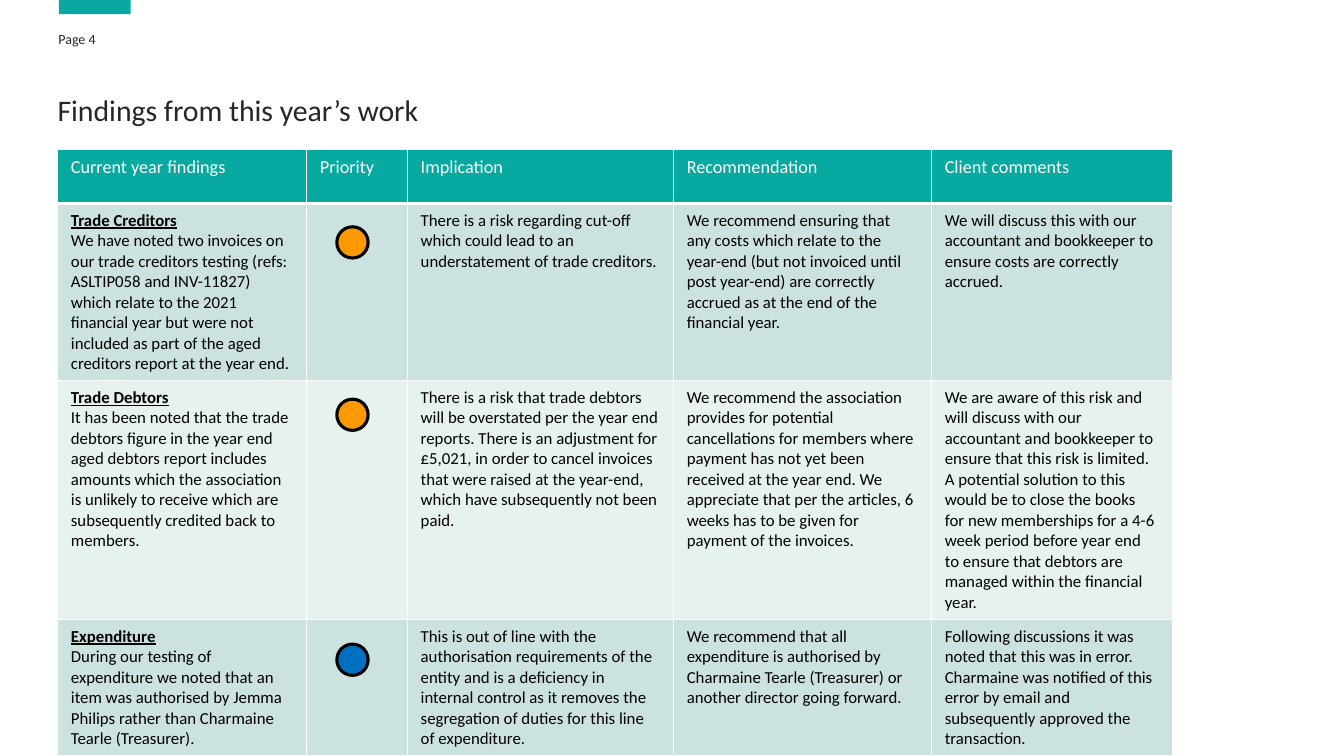
from dataclasses import dataclass

from lxml.etree import SubElement
from pptx import Presentation
from pptx.dml.color import RGBColor
from pptx.enum.shapes import MSO_SHAPE as Preset
from pptx.enum.text import MSO_ANCHOR as Anchor, MSO_AUTO_SIZE as AutoSize, PP_ALIGN as Align
from pptx.oxml.ns import qn
from pptx.shapes.base import BaseShape
from pptx.slide import Slide
from pptx.table import Table, _Cell as Cell
from pptx.text.text import TextFrame, _Paragraph as Paragraph
from pptx.util import Emu, Inches, Length, Pt

SLIDE_WIDTH = Inches(13.33)
SLIDE_HEIGHT = Inches(7.5)
FONT = "Calibri"

TEAL = RGBColor(0x07, 0xA9, 0xA1)
PALE_TEAL = RGBColor(0xCC, 0xE2, 0xE0)
PALEST_TEAL = RGBColor(0xE7, 0xF1, 0xF0)
CHARCOAL = RGBColor(0x26, 0x26, 0x26)
BLACK = RGBColor(0x00, 0x00, 0x00)
WHITE = RGBColor(0xFF, 0xFF, 0xFF)
AMBER = RGBColor(0xFF, 0x99, 0x00)
BLUE = RGBColor(0x00, 0x70, 0xC0)

HEADINGS = ("Current year findings", "Priority", "Implication", "Recommendation", "Client comments")
COLUMN_SHARES = (18.53, 7.5, 19.8, 19.2, 17.93)
HEADER_SHARE = 7.2


@dataclass(frozen=True)
class Area:
    left: float
    top: float
    width: float
    height: float

    def lengths(self) -> tuple[Length, Length, Length, Length]:
        return across(self.left), down(self.top), across(self.width), down(self.height)


@dataclass(frozen=True)
class Finding:
    topic: str
    detail: str
    implication: str
    recommendation: str
    comment: str
    priority: RGBColor
    marker_top: float
    row_share: float


FINDINGS = (
    Finding(
        "Trade Creditors",
        "We have noted two invoices on our trade creditors testing (refs: ASLTIP058 and INV-11827) "
        "which relate to the 2021 financial year but were not included as part of the aged "
        "creditors report at the year end.",
        "There is a risk regarding cut-off which could lead to an understatement of trade creditors.",
        "We recommend ensuring that any costs which relate to the year-end (but not invoiced until "
        "post year-end) are correctly accrued as at the end of the financial year.",
        "We will discuss this with our accountant and bookkeeper to ensure costs are correctly accrued.",
        AMBER, 30, 23.07,
    ),
    Finding(
        "Trade Debtors",
        "It has been noted that the trade debtors figure in the year end aged debtors report includes "
        "amounts which the association is unlikely to receive which are subsequently credited back "
        "to members.",
        "There is a risk that trade debtors will be overstated per the year end reports. There is an "
        "adjustment for £5,021, in order to cancel invoices that were raised at the year-end, which "
        "have subsequently not been paid.",
        "We recommend the association provides for potential cancellations for members where payment "
        "has not yet been received at the year end. We appreciate that per the articles, 6 weeks has "
        "to be given for payment of the invoices.",
        "We are aware of this risk and will discuss with our accountant and bookkeeper to ensure that "
        "this risk is limited. A potential solution to this would be to close the books for new "
        "memberships for a 4-6 week period before year end to ensure that debtors are managed within "
        "the financial year.",
        AMBER, 52.8, 25.73,
    ),
    Finding(
        "Expenditure",
        "During our testing of expenditure we noted that an item was authorised by Jemma Philips "
        "rather than Charmaine Tearle (Treasurer).",
        "This is out of line with the authorisation requirements of the entity and is a deficiency in "
        "internal control as it removes the segregation of duties for this line of expenditure.",
        "We recommend that all expenditure is authorised by Charmaine Tearle (Treasurer) or another "
        "director going forward.",
        "Following discussions it was noted that this was in error. Charmaine was notified of this "
        "error by email and subsequently approved the transaction.",
        BLUE, 85.2, 17.73,
    ),
)


def across(percent: float) -> Length:
    return Emu(round(SLIDE_WIDTH * percent / 100))


def down(percent: float) -> Length:
    return Emu(round(SLIDE_HEIGHT * percent / 100))


def add_run(paragraph: Paragraph, text: str, size: float, color: RGBColor, strong: bool = False) -> None:
    run = paragraph.add_run()
    run.text = text
    run.font.name = FONT
    run.font.size = Pt(size)
    run.font.color.rgb = color
    run.font.bold = strong
    run.font.underline = strong


def write_line(frame: TextFrame, text: str, size: float) -> None:
    frame.margin_left = frame.margin_right = frame.margin_top = frame.margin_bottom = 0
    frame.word_wrap = True
    frame.auto_size = AutoSize.NONE
    frame.vertical_anchor = Anchor.TOP
    paragraph = frame.paragraphs[0]
    paragraph.alignment = Align.LEFT
    paragraph.line_spacing = 0.9
    paragraph.space_before = Pt(0)
    add_run(paragraph, text, size, CHARCOAL)


def add_filled_shape(slide: Slide, preset: Preset, area: Area, color: RGBColor) -> BaseShape:
    shape = slide.shapes.add_shape(preset, *area.lengths())
    shape.shadow.inherit = False
    shape.fill.solid()
    shape.fill.fore_color.rgb = color
    shape.line.fill.background()
    return shape


def format_cell(cell: Cell, color: RGBColor, bottom_width: float = 1) -> None:
    cell.margin_left = cell.margin_right = across(1)
    cell.margin_top = cell.margin_bottom = down(0.89)
    properties = cell._tc.get_or_add_tcPr()
    for side, width in (("L", 1), ("R", 1), ("T", 1), ("B", bottom_width)):
        border = SubElement(properties, qn(f"a:ln{side}"), w=str(Pt(width)))
        fill = SubElement(border, qn("a:solidFill"))
        SubElement(fill, qn("a:srgbClr"), val=str(WHITE))
    cell.fill.solid()
    cell.fill.fore_color.rgb = color


def fill_finding(table: Table, row: int, finding: Finding) -> None:
    table.rows[row].height = down(finding.row_share)
    for cell in table.rows[row].cells:
        format_cell(cell, PALE_TEAL if row % 2 else PALEST_TEAL)
    summary = table.cell(row, 0).text_frame
    add_run(summary.paragraphs[0], finding.topic, 12, BLACK, strong=True)
    add_run(summary.add_paragraph(), finding.detail, 12, BLACK)
    responses = (finding.implication, finding.recommendation, finding.comment)
    for column, response in enumerate(responses, start=2):
        add_run(table.cell(row, column).text_frame.paragraphs[0], response, 12, BLACK)


def add_findings_table(slide: Slide) -> None:
    height = HEADER_SHARE + sum(finding.row_share for finding in FINDINGS)
    area = Area(4.28, 19.73, sum(COLUMN_SHARES), height)
    table = slide.shapes.add_table(len(FINDINGS) + 1, len(HEADINGS), *area.lengths()).table
    table.rows[0].height = down(HEADER_SHARE)
    for column, (heading, share) in enumerate(zip(HEADINGS, COLUMN_SHARES)):
        table.columns[column].width = across(share)
        header = table.cell(0, column)
        format_cell(header, TEAL, bottom_width=3)
        add_run(header.text_frame.paragraphs[0], heading, 13, WHITE)
    for row, finding in enumerate(FINDINGS, start=1):
        fill_finding(table, row, finding)


def add_priority_marker(slide: Slide, finding: Finding) -> None:
    area = Area(25.06, finding.marker_top, 2.33, 4.13)
    marker = add_filled_shape(slide, Preset.OVAL, area, finding.priority)
    marker.line.color.rgb = BLACK
    marker.line.width = Pt(2.25)


def main() -> None:
    deck = Presentation()
    deck.slide_width, deck.slide_height = SLIDE_WIDTH, SLIDE_HEIGHT
    slide = deck.slides.add_slide(deck.slide_layouts[5])
    add_filled_shape(slide, Preset.RECTANGLE, Area(4.39, 0, 5.33, 1.87), TEAL)
    page_label = slide.shapes.add_textbox(*Area(4.35, 4.27, 19.95, 2.13).lengths())
    write_line(page_label.text_frame, "Page 4", 10)
    title = slide.shapes.title
    title.left, title.top, title.width, title.height = Area(4.28, 12.67, 91.37, 6.8).lengths()
    write_line(title.text_frame, "Findings from this year’s work", 21.3)
    add_findings_table(slide)
    for finding in FINDINGS:
        add_priority_marker(slide, finding)
    deck.save("out.pptx")


if __name__ == "__main__":
    main()
